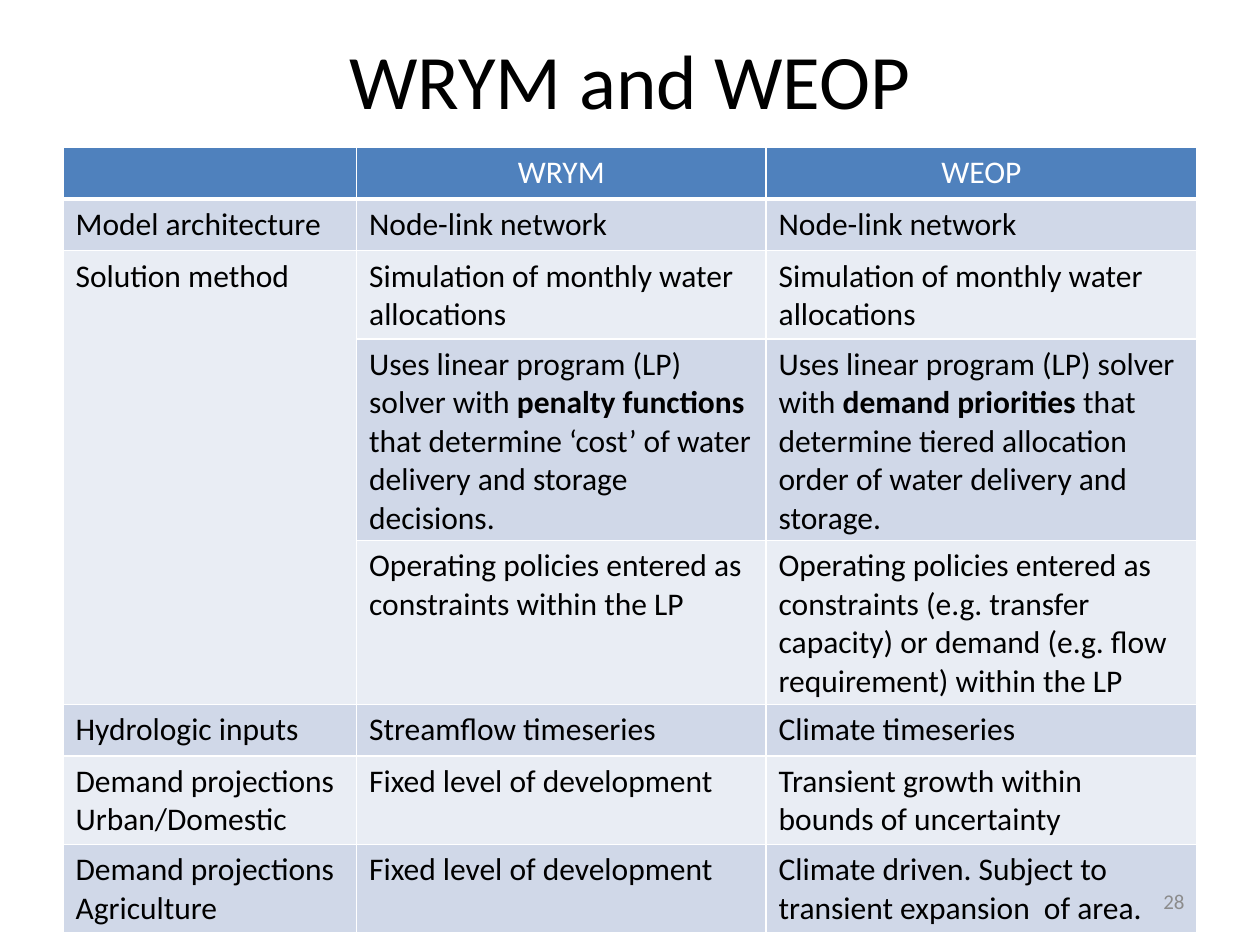
"""Build a slide with a table comparing the WRYM and WEOP models."""
from dataclasses import dataclass

import lxml.etree
import pptx
import pptx.dml.color
import pptx.enum.text
import pptx.oxml.ns
import pptx.util

Align = pptx.enum.text.PP_ALIGN
Anchor = pptx.enum.text.MSO_ANCHOR
Inch = pptx.util.Inches


@dataclass(frozen=True)
class Theme:
    font: str = "Calibri"
    ink: str = "000000"
    white: str = "FFFFFF"
    gray: str = "8C8C8C"
    head: str = "4F81BD"
    bands: tuple[str, str] = ("D0D8E8", "E9EDF4")
    title: int = 44
    body: int = 18
    note: int = 12
    rule: int = 1
    thick: int = 3


@dataclass(frozen=True)
class Box:
    left: float
    top: float
    width: float
    height: float


@dataclass(frozen=True)
class Row:
    topic: str
    wrym: str
    weop: str


THEME = Theme()
WIDE, HIGH = 10, 7.5
MARGIN = WIDE / 20
TITLE = Box(MARGIN, 0, WIDE - 2 * MARGIN, HIGH / 6)
NUMBER = Box(7.17, 6.95, 2.33, 0.4)
TOP, STEP = 1.17, 0.41
COLS = (2.33, 3.25, 3.42)
MERGE = (2, 4)
ROWS = (
    Row("", "WRYM", "WEOP"),
    Row("Model architecture", "Node-link network", "Node-link network"),
    Row("Solution method", "Simulation of monthly water allocations",
        "Simulation of monthly water allocations"),
    Row("", "Uses linear program (LP) solver with **penalty functions** that "
        "determine ‘cost’ of water delivery and storage decisions.",
        "Uses linear program (LP) solver with **demand priorities **that "
        "determine tiered allocation order of water delivery and storage."),
    Row("", "Operating policies entered as constraints within the LP",
        "Operating policies entered as constraints (e.g. transfer capacity) "
        "or demand (e.g. flow requirement) within the LP"),
    Row("Hydrologic inputs", "Streamflow timeseries", "Climate timeseries"),
    Row("Demand projections\nUrban/Domestic", "Fixed level of development",
        "Transient growth within bounds of uncertainty"),
    Row("Demand projections\nAgriculture", "Fixed level of development",
        "Climate driven. Subject to transient expansion  of area."),
)


def write(frame, text: str, *, size: int = THEME.body, color: str = THEME.ink,
          align=Align.LEFT) -> None:
    frame.word_wrap = True
    for i, line in enumerate(text.split("\n")):
        para = frame.paragraphs[0] if i == 0 else frame.add_paragraph()
        para.alignment = align
        para.font.size = pptx.util.Pt(size)
        for j, part in enumerate(line.split("**")):
            if part:
                run = para.add_run()
                run.text = part
                run.font.name = THEME.font
                run.font.size = pptx.util.Pt(size)
                run.font.bold = j % 2 == 1
                run.font.color.rgb = pptx.dml.color.RGBColor.from_string(color)


def label(slide, box: Box, text: str, **style) -> None:
    shape = slide.shapes.add_textbox(
        *map(Inch, (box.left, box.top, box.width, box.height)))
    shape.text_frame.vertical_anchor = Anchor.MIDDLE
    write(shape.text_frame, text, **style)


def border(cell, base: int) -> None:
    props = cell._tc.get_or_add_tcPr()
    name = pptx.oxml.ns.qn
    for side in "LRTB":
        width = base if side == "B" else THEME.rule
        line = lxml.etree.SubElement(props, name(f"a:ln{side}"),
                                     w=str(pptx.util.Pt(width)))
        fill = lxml.etree.SubElement(line, name("a:solidFill"))
        lxml.etree.SubElement(fill, name("a:srgbClr"), val=THEME.white)


def paint(cell, color: str) -> None:
    cell.fill.solid()
    cell.fill.fore_color.rgb = pptx.dml.color.RGBColor.from_string(color)


def grid(slide) -> None:
    table = slide.shapes.add_table(
        len(ROWS), len(COLS), Inch(MARGIN), Inch(TOP),
        Inch(sum(COLS)), Inch(STEP * len(ROWS))).table
    for col, width in zip(table.columns, COLS):
        col.width = Inch(width)
    for r, row in enumerate(ROWS):
        table.rows[r].height = Inch(STEP)
        head = r == 0
        for c, text in enumerate((row.topic, row.wrym, row.weop)):
            cell = table.cell(r, c)
            band = MERGE[0] if c == 0 and MERGE[0] <= r <= MERGE[1] else r
            border(cell, THEME.thick if head else THEME.rule)
            paint(cell, THEME.head if head else THEME.bands[(band - 1) % 2])
            write(cell.text_frame, text,
                  color=THEME.white if head else THEME.ink,
                  align=Align.CENTER if head else Align.LEFT)
    first, last = MERGE
    table.cell(first, 0).merge(table.cell(last, 0))


def main() -> None:
    deck = pptx.Presentation()
    deck.slide_width, deck.slide_height = Inch(WIDE), Inch(HIGH)
    slide = deck.slides.add_slide(deck.slide_layouts[6])
    label(slide, TITLE, "WRYM and WEOP", size=THEME.title, align=Align.CENTER)
    grid(slide)
    label(slide, NUMBER, "28", size=THEME.note, color=THEME.gray,
          align=Align.RIGHT)
    deck.save("out.pptx")


if __name__ == "__main__":
    main()
